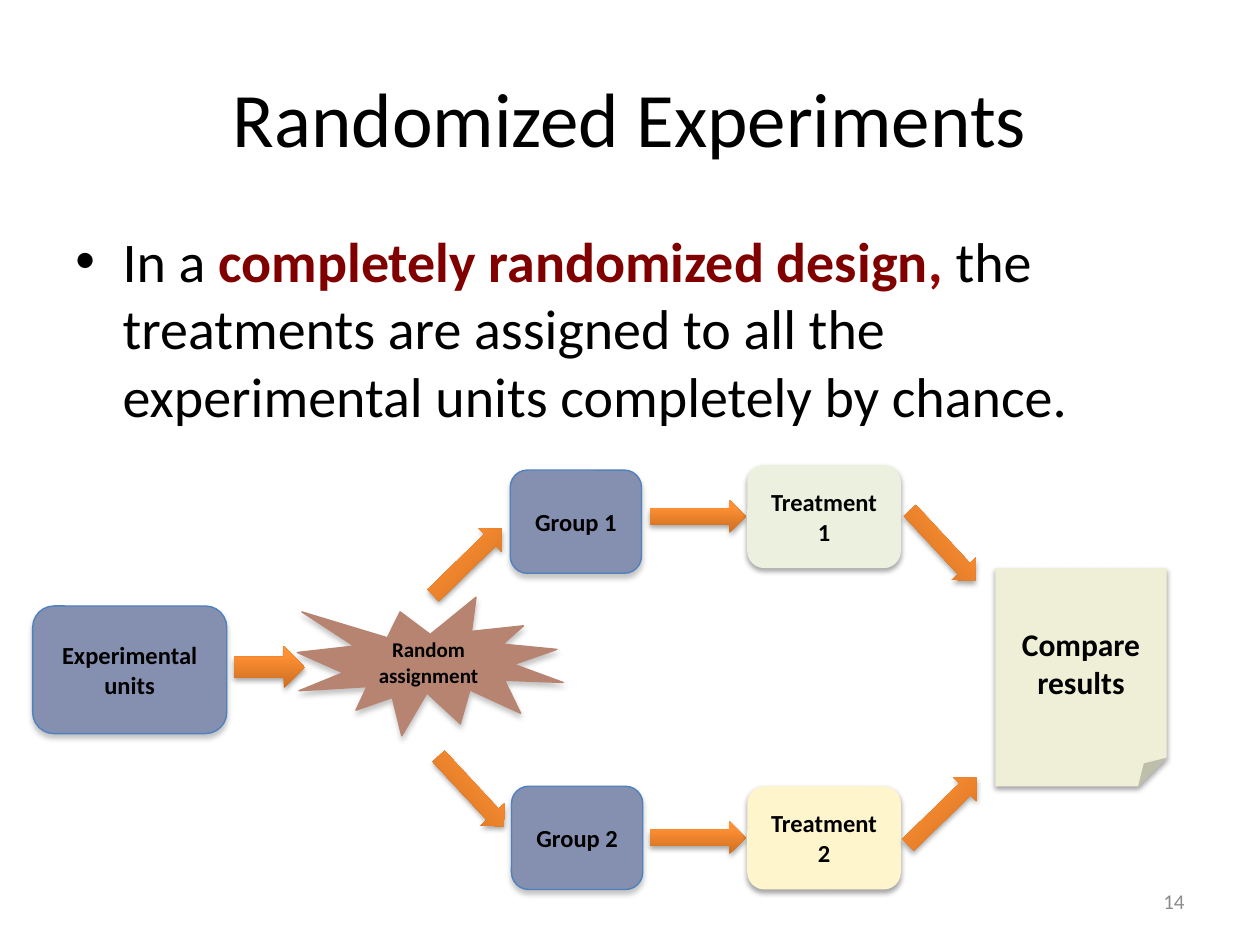
from dataclasses import dataclass

from lxml import etree
from pptx import Presentation
from pptx.dml.color import RGBColor
from pptx.enum.shapes import MSO_SHAPE
from pptx.enum.text import MSO_ANCHOR, PP_ALIGN
from pptx.oxml.ns import qn
from pptx.util import Pt

ROUNDED = MSO_SHAPE.ROUNDED_RECTANGLE
BURST = MSO_SHAPE.EXPLOSION1
ARROW = MSO_SHAPE.RIGHT_ARROW
NOTE = MSO_SHAPE.FOLDED_CORNER
LEFT, CENTER, RIGHT = PP_ALIGN.LEFT, PP_ALIGN.CENTER, PP_ALIGN.RIGHT
TOP, MIDDLE = MSO_ANCHOR.TOP, MSO_ANCHOR.MIDDLE


@dataclass(frozen=True)
class Theme:
    font: str = "Calibri"
    text: str = "000000"
    key_term: str = "800000"
    key_comma: str = "990000"
    page_number: str = "8C8C8C"
    unit: str = "8590B1"
    unit_line: str = "4F81BD"
    burst: str = "B88472"
    treatment_1: str = "EBF1DE"
    treatment_2: str = "FFF5CC"
    result: str = "EEEFD6"
    arrow_stops: tuple = ((0, "CC6E20"), (80, "FF9034"), (100, "FF9136"))
    # colour, opacity %, blur, distance
    outlined_shadow: tuple = ("808080", 45, 3, 2.4)
    plain_shadow: tuple = ("000000", 35, 3.1, 1.8)
    title_size: float = 44
    body_size: float = 32
    result_size: float = 18
    label_size: float = 14
    small_size: float = 12


class Deck:
    def __init__(self, theme, slide):
        self.theme = theme
        self.slide = slide

    def add_runs(self, tf, runs, size, align, anchor):
        """Fill a text frame with (text, colour, bold) runs."""
        tf.word_wrap = True
        tf.vertical_anchor = anchor
        p = tf.paragraphs[0]
        p.alignment = align
        for text, color, bold in runs:
            r = p.add_run()
            r.text = text
            r.font.name = self.theme.font
            r.font.size = Pt(size)
            r.font.bold = bold
            r.font.color.rgb = RGBColor.from_string(color)
        return p

    def text(self, box, runs, size, align=LEFT, anchor=TOP):
        sp = self.slide.shapes.add_textbox(*map(Pt, box))
        return self.add_runs(sp.text_frame, runs, size, align, anchor)

    def bullet(self, box, runs, size, indent):
        p = self.text(box, runs, size)
        p.space_before = Pt(size * 0.2)
        pPr = p._p.get_or_add_pPr()
        pPr.set("marL", str(Pt(indent)))
        pPr.set("indent", str(-Pt(indent)))
        etree.SubElement(pPr, qn("a:buFont"), typeface="Arial")
        etree.SubElement(pPr, qn("a:buChar"), char="•")

    def shadow(self, sp, style):
        """Cast a soft shadow straight down."""
        color, opacity, blur, distance = style
        effects = etree.SubElement(sp._element.spPr, qn("a:effectLst"))
        outer = etree.SubElement(
            effects, qn("a:outerShdw"), blurRad=str(Pt(blur)),
            dist=str(Pt(distance)), dir="5400000", rotWithShape="0")
        clr = etree.SubElement(outer, qn("a:srgbClr"), val=color)
        etree.SubElement(clr, qn("a:alpha"), val=str(opacity * 1000))

    def card(self, kind, box, label, fill, line=None, size=None):
        sp = self.slide.shapes.add_shape(kind, *map(Pt, box))
        sp.fill.solid()
        sp.fill.fore_color.rgb = RGBColor.from_string(fill)
        if line:
            sp.line.color.rgb = RGBColor.from_string(line)
            sp.line.width = Pt(0.79)
        else:
            sp.line.fill.background()
        self.shadow(sp, self.theme.outlined_shadow if line else self.theme.plain_shadow)
        self.add_runs(sp.text_frame, [(label, self.theme.text, True)],
                      size or self.theme.label_size, CENTER, MIDDLE)

    def arrow(self, left, top, width=54.7, height=18.7, rotation=0):
        sp = self.slide.shapes.add_shape(ARROW, *map(Pt, (left, top, width, height)))
        sp.rotation = rotation
        sp.line.fill.background()
        grad = etree.Element(qn("a:gradFill"), rotWithShape="1")
        stops = etree.SubElement(grad, qn("a:gsLst"))
        for position, color in self.theme.arrow_stops:
            gs = etree.SubElement(stops, qn("a:gs"), pos=str(position * 1000))
            etree.SubElement(gs, qn("a:srgbClr"), val=color)
        etree.SubElement(grad, qn("a:lin"), ang="16200000", scaled="0")
        sp._element.spPr.find(qn("a:prstGeom")).addnext(grad)
        self.shadow(sp, self.theme.plain_shadow)


def main():
    prs = Presentation()
    prs.slide_width, prs.slide_height = Pt(720), Pt(540)
    theme = Theme()
    deck = Deck(theme, prs.slides.add_slide(prs.slide_layouts[6]))

    deck.text((36, 21.6, 648, 90), [("Randomized Experiments", theme.text, False)],
              theme.title_size, CENTER, MIDDLE)
    deck.bullet((36, 126, 648, 356.4), [
        ("In a ", theme.text, False),
        ("completely randomized design", theme.key_term, True),
        (",", theme.key_comma, True),
        (" the treatments are assigned to all the experimental units "
         "completely by chance.", theme.text, False),
    ], theme.body_size, 27)
    deck.text((516, 500.5, 168, 28.75), [("14", theme.page_number, False)],
              theme.small_size, RIGHT, MIDDLE)

    deck.card(ROUNDED, (18.7, 346.3, 110.9, 72.9), "Experimental units",
              theme.unit, theme.unit_line)
    deck.card(BURST, (169.9, 341.3, 151.9, 79.2), "Random assignment",
              theme.burst, theme.burst, theme.small_size)
    deck.arrow(133.9, 369.4, 40.3, 23.8)

    rising, falling = 315.8, 47.1
    branches = [
        # number, group left and top, treatment top and fill, straight arrow top,
        # arrow from assignment, arrow to comparison
        (1, 291.6, 268.6, 265.7, theme.treatment_1, 285.8,
         (239.8, 311.8, rising), (511.2, 302.4, falling)),
        (2, 292.3, 449.3, 449.3, theme.treatment_2, 469.4,
         (241.9, 442.8, falling), (511.2, 454.3, rising)),
    ]
    for number, left, top, treat_top, fill, arrow_top, split, merge in branches:
        deck.card(ROUNDED, (left, top, 75, 59), f"Group {number}",
                  theme.unit, theme.unit_line)
        deck.arrow(371.5, arrow_top)
        deck.card(ROUNDED, (427, treat_top, 87.8, 59), f"Treatment {number}", fill)
        for x, y, rotation in (split, merge):
            deck.arrow(x, y, rotation=rotation)

    deck.card(NOTE, (568.8, 324.7, 97.9, 124.6), "Compare results",
              theme.result, size=theme.result_size)
    prs.save("out.pptx")


if __name__ == "__main__":
    main()
